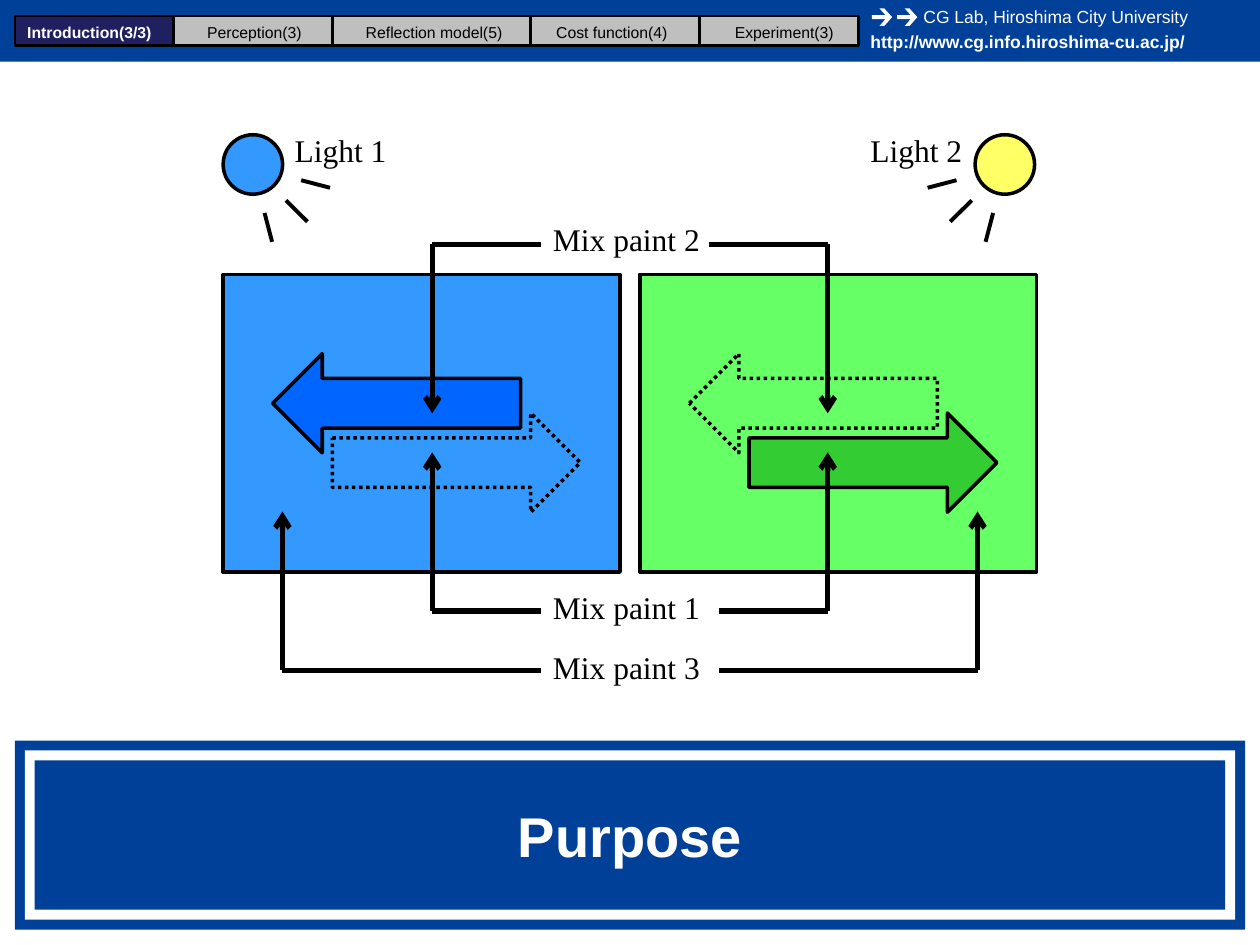
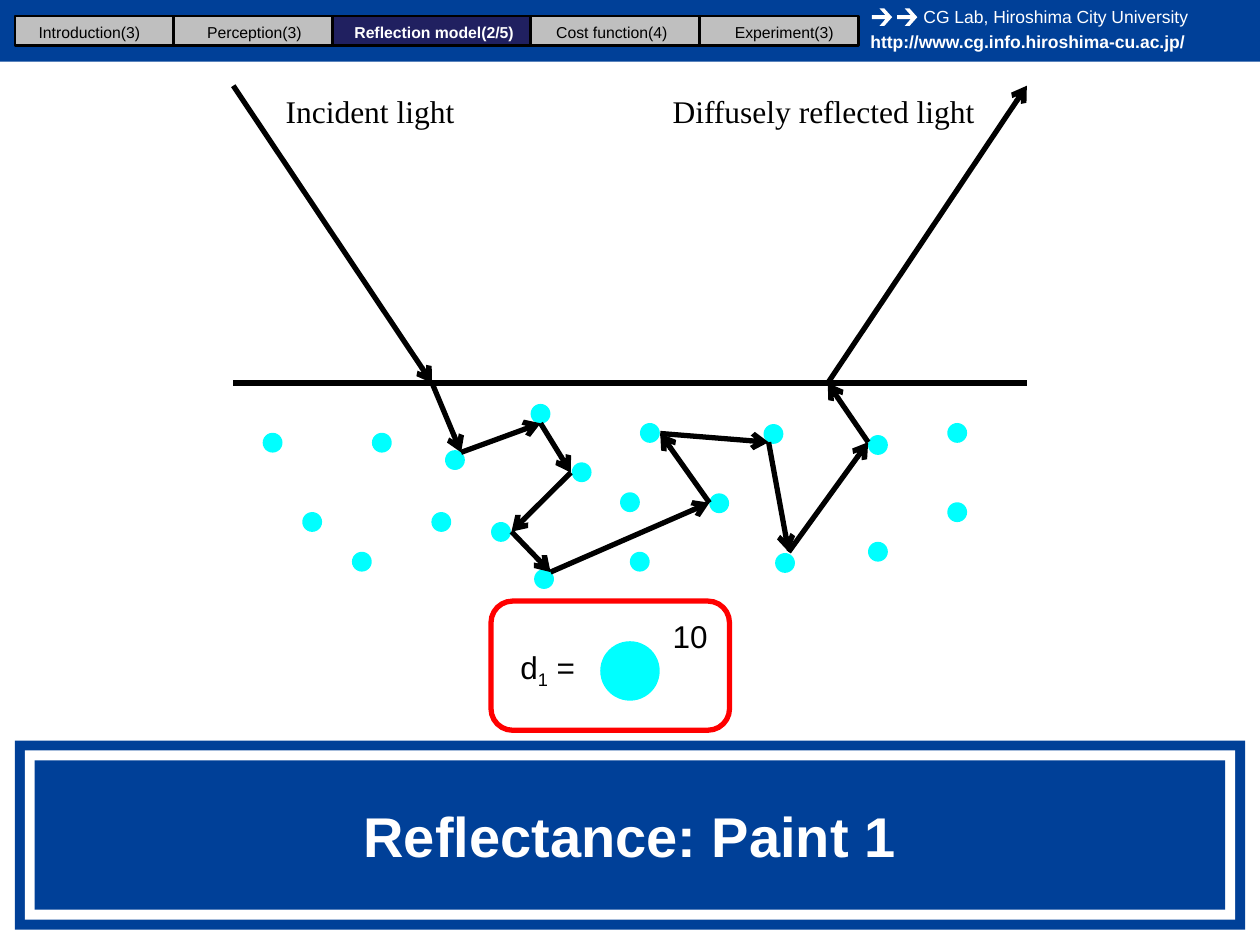
"""Builds two lecture slides on mixing paints under two lights and on paint reflectance."""
from itertools import pairwise

from lxml.etree import SubElement
from pptx import Presentation
from pptx.dml.color import RGBColor
from pptx.enum.dml import MSO_LINE
from pptx.enum.shapes import MSO_CONNECTOR, MSO_SHAPE
from pptx.enum.text import MSO_ANCHOR, PP_ALIGN
from pptx.oxml.ns import qn
from pptx.util import Pt

NAVY = RGBColor(0x00, 0x40, 0x98)
ACTIVE_TAB = RGBColor(0x20, 0x20, 0x60)
IDLE_TAB = RGBColor(0xBF, 0xBF, 0xBF)
WHITE = RGBColor(0xFF, 0xFF, 0xFF)
BLACK = RGBColor(0x00, 0x00, 0x00)
RED = RGBColor(0xFF, 0x00, 0x00)
CYAN = RGBColor(0x00, 0xFF, 0xFF)
SKY = RGBColor(0x33, 0x99, 0xFF)
BLUE = RGBColor(0x00, 0x66, 0xFF)
LIME = RGBColor(0x66, 0xFF, 0x66)
GREEN = RGBColor(0x33, 0xCC, 0x33)
YELLOW = RGBColor(0xFF, 0xFF, 0x66)
SANS, SERIF = "Arial", "Times New Roman"

GRID = 5.67
MARGIN = 8.5
WIDTH, HEIGHT = 720, 540
MIDDLE = WIDTH / 2

TABS = [
    ("Introduction(3)", 16, 51.1),
    ("Perception(3)", 16, 145.4),
    ("Reflection model(5)", 20, 248),
    ("Cost function(4)", 17, 349.6),
    ("Experiment(3)", 16, 448.2),
]
HEADER_LINES = [
    ("http://www.cg.info.hiroshima-cu.ac.jp/", 490.3, 14.4, True),
    ("CG Lab, Hiroshima City University", 520.6, 0, False),
]
ICON_LEFTS = (498.3, 512.7)
ICON_OUTLINE = [(4.3, 10.1), (7.7, 6.2), (0, 6.2), (0, 3.9), (7.7, 3.9),
                (4.3, 0), (7, 0), (11.5, 5.05), (7, 10.1)]

PANEL_TOP, PANEL_SIZE = 156.8, (226.8, 170.1)
PANELS = [(127.5, SKY, BLUE, None), (365.6, LIME, None, GREEN)]
LEFT_ARROW_OFFSET, RIGHT_ARROW_OFFSET = (28.3, 45.3), (62.4, 79.2)
ARROW_SIZE = (141.7, 56.7)
LAMPS = [("Light 1", 161.3, 144.5, 1, SKY), ("Light 2", 490.3, 574.2, -1, YELLOW)]
LAMP_Y, LAMP_SIZE = 94, 34
RAYS = [(6.7, 27.7, 11, 44.2), (27.6, 9, 44.1, 13.3), (18.9, 20.5, 31.2, 32.7)]
MIXES = [
    ("Mix paint 3", 366.5, 383, 292.3, 198.6, 411.1),
    ("Mix paint 1", 332.6, 349.2, 258.5, 113, 411.1),
    ("Mix paint 2", 122.4, 139.7, 236.2, 113, 405.4),
]
MIX_LEFT = 308.9

SURFACE_Y = 218.9
LIGHT_PATH = [
    (133.3, 49), (246.9, SURFACE_Y), (263.5, 258.5), (308.9, 241.9), (326.2, 270),
    (292.3, 303.8), (314.6, 326.9), (405.4, 287.3), (377.3, 247.7), (439.2, 252.7),
    (450.7, 315.4), (496.1, 252.7), (473, SURFACE_Y), (586.8, 49),
]
PIGMENTS = [
    (260, 262.9), (501.7, 254.3), (371.4, 247.4), (286.3, 304), (332.4, 269.9),
    (178.4, 298.3), (155.8, 253), (547, 292.7), (206.8, 321), (218.2, 253),
    (448.6, 321.7), (365.6, 321), (501.7, 315.3), (310.9, 330.9), (360, 287),
    (547, 247.4), (252.2, 298.3), (442, 248), (411, 287.6), (308.9, 236.5),
]
PIGMENT_SIZE = 2 * GRID
LIGHT_LABELS = [("Incident light", 156.2, 112.3), ("Diffusely reflected light", 377.3, 193.7)]
FORMULA = [("d", 0), ("1", -25000), (" =", 0)]


def paint(shape, fill, line=None, weight=2, dotted=False):
    shape.shadow.inherit = False
    if fill is None:
        shape.fill.background()
    else:
        shape.fill.solid()
        shape.fill.fore_color.rgb = fill
    if line is None:
        shape.line.fill.background()
    else:
        shape.line.color.rgb = line
        shape.line.width = Pt(weight)
        if dotted:
            shape.line.dash_style = MSO_LINE.ROUND_DOT
    return shape


def add_figure(slide, kind, left, top, width, height, fill, **outline):
    shape = slide.shapes.add_shape(kind, Pt(left), Pt(top), Pt(width), Pt(height))
    return paint(shape, fill, **outline)


def add_disc(slide, x, y, size, fill, **outline):
    return add_figure(slide, MSO_SHAPE.OVAL, x - size / 2, y - size / 2, size, size,
                      fill, **outline)


def add_line(slide, start, end, weight=3, arrow=False):
    ends = [Pt(value) for value in (*start, *end)]
    connector = slide.shapes.add_connector(MSO_CONNECTOR.STRAIGHT, *ends)
    connector.line.color.rgb = BLACK
    connector.line.width = Pt(weight)
    properties = connector._element.spPr
    if arrow:
        SubElement(properties.find(qn("a:ln")), qn("a:tailEnd"), type="arrow")
    SubElement(properties, qn("a:effectLst"))


def style_text(paragraph, size, font, color, bold=False, align=PP_ALIGN.LEFT):
    paragraph.alignment = align
    for run in paragraph.runs:
        run.font.size = Pt(size)
        run.font.name = font
        run.font.bold = bold
        run.font.color.rgb = color


def add_label(slide, text, left, top, width, height=28.8, size=18, font=SERIF, color=BLACK,
              **style):
    box = slide.shapes.add_textbox(Pt(left), Pt(top), Pt(width), Pt(height))
    box.text_frame.word_wrap = False
    box.text_frame.text = text
    style_text(box.text_frame.paragraphs[0], size, font, color, **style)
    return box


def add_header(slide):
    add_figure(slide, MSO_SHAPE.RECTANGLE, 0, 0, WIDTH, 35.3, NAVY)
    for left in ICON_LEFTS:
        points = [(Pt(left + x), Pt(4.8 + y)) for x, y in ICON_OUTLINE]
        builder = slide.shapes.build_freeform(*points[0])
        builder.add_line_segments(points[1:])
        paint(builder.convert_to_shape(), WHITE)
    for text, left, top, bold in HEADER_LINES:
        add_label(slide, text, left, top, 198, 19.4, 10, SANS, WHITE, bold=bold)


def add_tabs(slide, active, active_label):
    left = MARGIN
    for index, (label, units, centre) in enumerate(TABS):
        width = units * GRID
        chosen = index == active
        add_figure(slide, MSO_SHAPE.RECTANGLE, left, 9.1, width, 17,
                   ACTIVE_TAB if chosen else IDLE_TAB, line=BLACK, weight=1.5)
        add_label(slide, active_label if chosen else label, centre - width / 2, 9.4, width, 18,
                  9, SANS, WHITE if chosen else BLACK, bold=chosen, align=PP_ALIGN.CENTER)
        left += width


def add_title(slide, title):
    for step, fill in enumerate((NAVY, WHITE, NAVY)):
        inset = step * GRID
        band = add_figure(slide, MSO_SHAPE.RECTANGLE, MARGIN + inset, 423.2 + inset,
                          WIDTH - 2 * (MARGIN + inset), 108 - 2 * inset, fill)
    band.text_frame.text = title
    band.text_frame.vertical_anchor = MSO_ANCHOR.MIDDLE
    style_text(band.text_frame.paragraphs[0], 32, SANS, WHITE, True, PP_ALIGN.CENTER)


def add_base_slide(presentation, title, active, active_label):
    slide = presentation.slides.add_slide(presentation.slide_layouts[6])
    add_header(slide)
    add_tabs(slide, active, active_label)
    add_title(slide, title)
    return slide


def draw_purpose(slide):
    for left, panel_fill, left_fill, right_fill in PANELS:
        add_figure(slide, MSO_SHAPE.RECTANGLE, left, PANEL_TOP, *PANEL_SIZE, panel_fill,
                   line=BLACK)
        arrows = [(MSO_SHAPE.RIGHT_ARROW, RIGHT_ARROW_OFFSET, right_fill),
                  (MSO_SHAPE.LEFT_ARROW, LEFT_ARROW_OFFSET, left_fill)]
        for kind, (dx, dy), fill in arrows:
            add_figure(slide, kind, left + dx, PANEL_TOP + dy, *ARROW_SIZE, fill,
                       line=BLACK, dotted=fill is None)
    for label, label_left, x, side, fill in LAMPS:
        add_disc(slide, x, LAMP_Y, LAMP_SIZE, fill, line=BLACK)
        for x1, y1, x2, y2 in RAYS:
            add_line(slide, (x + side * x1, LAMP_Y + y1), (x + side * x2, LAMP_Y + y2), 2.25)
        add_label(slide, label, label_left, 71.3, 67.7)
    for label, label_top, bar_y, tip_y, reach, right_end in MIXES:
        add_label(slide, label, MIX_LEFT, label_top, 99.4)
        for inner, outer in ((MIX_LEFT, MIDDLE - reach), (right_end, MIDDLE + reach)):
            add_line(slide, (inner, bar_y), (outer, bar_y))
            add_line(slide, (outer, bar_y), (outer, tip_y), arrow=True)


def draw_reflectance(slide):
    for x, y in PIGMENTS:
        add_disc(slide, x, y, PIGMENT_SIZE, CYAN)
    add_line(slide, (LIGHT_PATH[0][0], SURFACE_Y), (LIGHT_PATH[-1][0], SURFACE_Y))
    for start, end in pairwise(LIGHT_PATH):
        add_line(slide, start, end, arrow=True)
    for label, left, width in LIGHT_LABELS:
        add_label(slide, label, left, 49, width)
    add_figure(slide, MSO_SHAPE.ROUNDED_RECTANGLE, 280.6, 343.5, 136.3, 73.8, None,
               line=RED, weight=3)
    add_disc(slide, MIDDLE, 383.4, 34, CYAN)
    add_label(slide, "10", 377.3, 349.2, 34.6, font=SANS)
    formula = add_label(slide, "", 290.2, 366.5, 46.8).text_frame.paragraphs[0]
    for text, baseline in FORMULA:
        run = formula.add_run()
        run.text = text
        if baseline:
            run._r.get_or_add_rPr().set("baseline", str(baseline))
    style_text(formula, 18, SANS, BLACK)


def main():
    presentation = Presentation()
    presentation.slide_width, presentation.slide_height = Pt(WIDTH), Pt(HEIGHT)
    draw_purpose(add_base_slide(presentation, "Purpose", 0, "Introduction(3/3)"))
    draw_reflectance(add_base_slide(presentation, "Reflectance: Paint 1", 2,
                                    "Reflection model(2/5)"))
    presentation.save("out.pptx")


if __name__ == "__main__":
    main()
